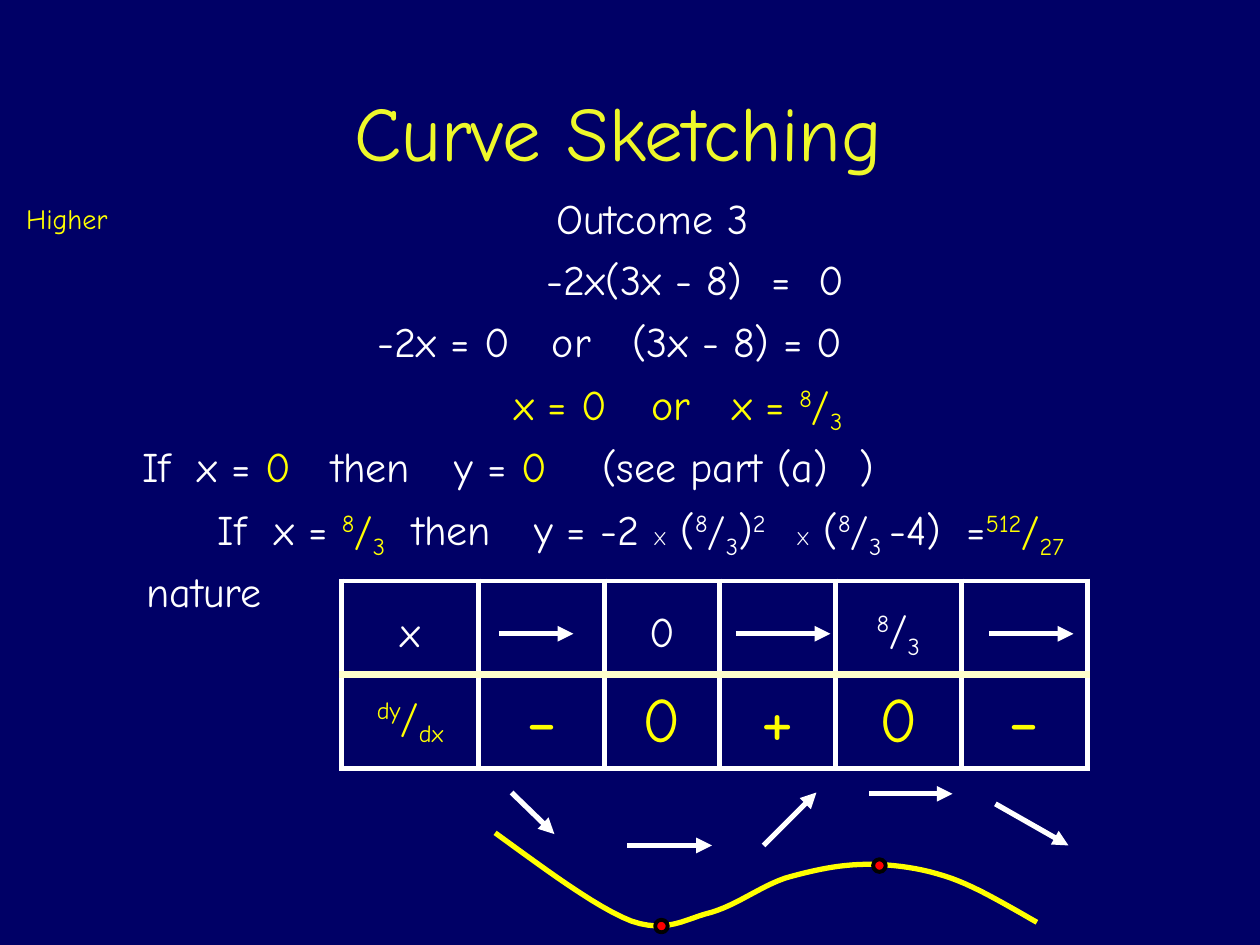
from collections import namedtuple
from dataclasses import dataclass

from lxml.etree import SubElement
from pptx import Presentation
from pptx.dml.color import RGBColor
from pptx.enum.shapes import MSO_CONNECTOR as Connector, MSO_SHAPE as Shape
from pptx.enum.text import MSO_ANCHOR as Anchor, MSO_AUTO_SIZE as AutoSize, PP_ALIGN as Align
from pptx.oxml.ns import qn
from pptx.util import Inches, Pt


@dataclass(frozen=True)
class Theme:
    font: str = "Comic Neue"
    night: str = "000066"
    title: str = "EEF82A"
    white: str = "FFFFFF"
    yellow: str = "FFFF00"
    cream: str = "FFFFCC"
    red: str = "FF0000"
    black: str = "000000"
    title_size: float = 44
    sign_size: float = 44
    zero_size: float = 36
    body_size: float = 24
    level_size: float = 16
    times_size: float = 11
    line: float = 3
    divider: float = 4.5
    dot_line: float = 2.25


THEME = Theme()
Run = namedtuple("Run", "text color size base",
                 defaults=(THEME.white, THEME.body_size, 0))
Box = namedtuple("Box", "left top width height")


def apply_format(target, formats):
    for name, value in formats.items():
        setattr(target, name, value)


def inside(box, left, top, width, height):
    return [Inches(v) for v in (box.left + left, box.top + top, width, height)]


def fraction(over, under, color=THEME.white):
    return [Run(over, color, base=30), Run("/", color), Run(under, color, base=-25)]


def write(frame, runs, align=Align.CENTER):
    paragraph = frame.paragraphs[0]
    paragraph.alignment = align
    for item in runs:
        piece = paragraph.add_run()
        piece.text = item.text
        apply_format(piece.font, {"name": THEME.font, "size": Pt(item.size)})
        piece.font.color.rgb = RGBColor.from_string(item.color)
        if item.base:
            piece.font._element.set("baseline", str(item.base * 1000))
    return paragraph


def add_text(slide, place, runs, align=Align.CENTER, **formats):
    frame = slide.shapes.add_textbox(*place).text_frame
    apply_format(frame, {"word_wrap": True, "auto_size": AutoSize.SHAPE_TO_FIT_TEXT, **formats})
    return write(frame, runs, align)


def style_line(line, color, width):
    line.color.rgb = RGBColor.from_string(color)
    line.width = Pt(width)


def add_arrow(slide, box, start, end):
    points = [Inches(v) for x, y in (start, end) for v in (box.left + x, box.top + y)]
    arrow = slide.shapes.add_connector(Connector.STRAIGHT, *points)
    style_line(arrow.line, THEME.white, THEME.line)
    SubElement(arrow.line._get_or_add_ln(), qn("a:tailEnd"), type="triangle")
    SubElement(arrow._element.spPr, qn("a:effectLst"))


def add_header(slide, box):
    title = slide.shapes.title
    places = zip(("left", "top", "width", "height"), inside(box, 0.59, 0, 8.5, 1.25))
    apply_format(title, dict(places))
    apply_format(title.text_frame, {"vertical_anchor": Anchor.TOP, "word_wrap": True,
                                    "auto_size": AutoSize.NONE})
    write(title.text_frame, [Run("Curve Sketching", THEME.title, THEME.title_size)])
    add_text(slide, inside(box, 0, 0.93, 0.92, 0.37),
             [Run("Higher", THEME.yellow, THEME.level_size)], word_wrap=False)
    add_text(slide, inside(box, 4.16, 0.86, 1.9, 0.51), [Run("Outcome 3")], word_wrap=False)


def add_working(slide, box):
    yellow = THEME.yellow
    times = Run("X", size=THEME.times_size)
    steps = [
        (1.3, 5, [3.84, 5.62, 6], [Run("-2x(3x - 8)\t=\t0")]),
        (1.14, 5.17, [2.5, 3.88, 4.52], [Run("-2x = 0\tor\t(3x - 8) = 0")]),
        (1.55, 4.75, [3.58, 4.67, 5.31],
         [Run("x = 0\tor\tx = ", yellow), *fraction("8", "3", yellow)]),
        (0.34, 6.29, [0.63, 1.07, 2.13, 3.11, 4.28, 6.32],
         [Run("If\tx = "), Run("0", yellow), Run("\tthen\ty = "), Run("0", yellow),
          Run("\t(see part (a)\t)")]),
        (0.29, 7.77, [1.23, 1.68, 2.77, 3.74, 5.82, 7.17],
         [Run("If\tx = "), *fraction("8", "3", yellow), Run("\tthen\ty = -2 "), times,
          Run(" ("), *fraction("8", "3"), Run(")"), Run("2", base=30), Run("\t"), times,
          Run(" ("), *fraction("8", "3 "), Run("-4)\t="), *fraction("512", "27", yellow)]),
        (0.05, 2.17, [0.66], [Run("nature")]),
    ]
    row_height = 0.51
    pitch = (box.height - row_height) / (len(steps) - 1)
    for index, (left, width, (start, *stops), runs) in enumerate(steps):
        step = add_text(slide, inside(box, left, index * pitch, width, row_height), runs,
                        Align.LEFT, margin_left=Inches(start - left), margin_right=0)
        if stops:
            tabs = SubElement(step._p.get_or_add_pPr(), qn("a:tabLst"))
            for stop in stops:
                SubElement(tabs, qn("a:tab"), pos=str(Inches(stop - start)), algn="l")


def add_border(cell, side, color, width):
    border = SubElement(cell._tc.get_or_add_tcPr(), qn(f"a:ln{side}"), w=str(Pt(width)))
    SubElement(SubElement(border, qn("a:solidFill")), qn("a:srgbClr"), val=color)


def add_nature_table(slide, box):
    yellow = THEME.yellow
    zero = [Run("0", yellow, THEME.zero_size)]
    minus, plus = ([Run(sign, yellow, THEME.sign_size)] for sign in "-+")
    rows = [
        [[Run("x")], [], [Run("0")], [], fraction("8", "3"), []],
        [fraction("dy", "dx", yellow), minus, zero, plus, zero, minus],
    ]
    widths = [1.09, 1, 0.91, 0.92, 1, 1]
    table = slide.shapes.add_table(len(rows), len(widths), *inside(box, 0, 0, *box[2:])).table
    apply_format(table, {"first_row": False, "horz_banding": False})
    for column, width in zip(table.columns, widths):
        column.width = Inches(width)
    for r, cells in enumerate(rows):
        table.rows[r].height = Inches(box.height / len(rows))
        for c, runs in enumerate(cells):
            cell = table.cell(r, c)
            apply_format(cell, {"margin_left": 0, "margin_right": 0, "margin_bottom": 0,
                                "margin_top": 0 if r else Inches(0.1),
                                "vertical_anchor": Anchor.MIDDLE})
            for side in "LRTB":
                shared = side == "BT"[r]
                add_border(cell, side, THEME.cream if shared else THEME.white,
                           THEME.divider if shared else THEME.line)
            cell.fill.background()
            write(cell.text_frame, runs)
    for start, end in [(1.25, 1.84), (3.13, 3.88), (5.14, 5.81)]:
        add_arrow(slide, box, (start, 0.42), (end, 0.42))


def add_slopes(slide, box):
    for start, end in [((0.06, 0), (0.4, 0.33)), ((0.98, 0.42), (1.65, 0.42)),
                       ((2.06, 0.42), (2.48, 0)), ((2.9, 0.01), (3.56, 0.01)),
                       ((3.9, 0.09), (4.48, 0.42))]:
        add_arrow(slide, box, start, end)


def bezier(points, t):
    weights = ((1 - t) ** 3, 3 * t * (1 - t) ** 2, 3 * t * t * (1 - t), t ** 3)
    return tuple(sum(w * p[axis] for w, p in zip(weights, points)) for axis in (0, 1))


def add_curve(slide, box):
    knots = [(0, 0), (0.4, 0.29), (0.8, 0.59), (1.08, 0.7), (1.37, 0.8), (1.51, 0.68),
             (1.72, 0.63), (1.92, 0.57), (2.1, 0.43), (2.3, 0.36), (2.51, 0.3), (2.73, 0.25),
             (2.95, 0.25), (3.17, 0.25), (3.39, 0.28), (3.62, 0.36), (3.84, 0.44),
             (4.07, 0.58), (4.3, 0.71)]
    detail = 12
    trace = [knots[0]] + [bezier(knots[i:i + 4], n / detail)
                          for i in range(0, len(knots) - 1, 3) for n in range(1, detail + 1)]
    points = [(Inches(box.left + x), Inches(box.top + y)) for x, y in trace]
    builder = slide.shapes.build_freeform(*points[0])
    builder.add_line_segments(points[1:], close=False)
    curve = builder.convert_to_shape()
    curve.shadow.inherit = False
    curve.fill.background()
    style_line(curve.line, THEME.yellow, THEME.line)
    for left, top in [(1.27, 0.69), (3, 0.21)]:
        turning_point = slide.shapes.add_shape(Shape.OVAL, *inside(box, left, top, 0.1, 0.1))
        turning_point.shadow.inherit = False
        turning_point.fill.solid()
        turning_point.fill.fore_color.rgb = RGBColor.from_string(THEME.red)
        style_line(turning_point.line, THEME.black, THEME.dot_line)


def main():
    deck = Presentation()
    apply_format(deck, {"slide_width": Inches(10), "slide_height": Inches(7.5)})
    slide = deck.slides.add_slide(deck.slide_layouts[5])
    slide.background.fill.solid()
    slide.background.fill.fore_color.rgb = RGBColor.from_string(THEME.night)
    add_header(slide, Box(0.07, 0.62, 9.09, 1.37))
    add_working(slide, Box(0.5, 1.96, 8.06, 2.99))
    add_nature_table(slide, Box(2.71, 4.61, 5.92, 1.49))
    add_slopes(slide, Box(4, 6.29, 4.48, 0.42))
    add_curve(slide, Box(3.93, 6.61, 4.3, 0.81))
    deck.save("out.pptx")


if __name__ == "__main__":
    main()
